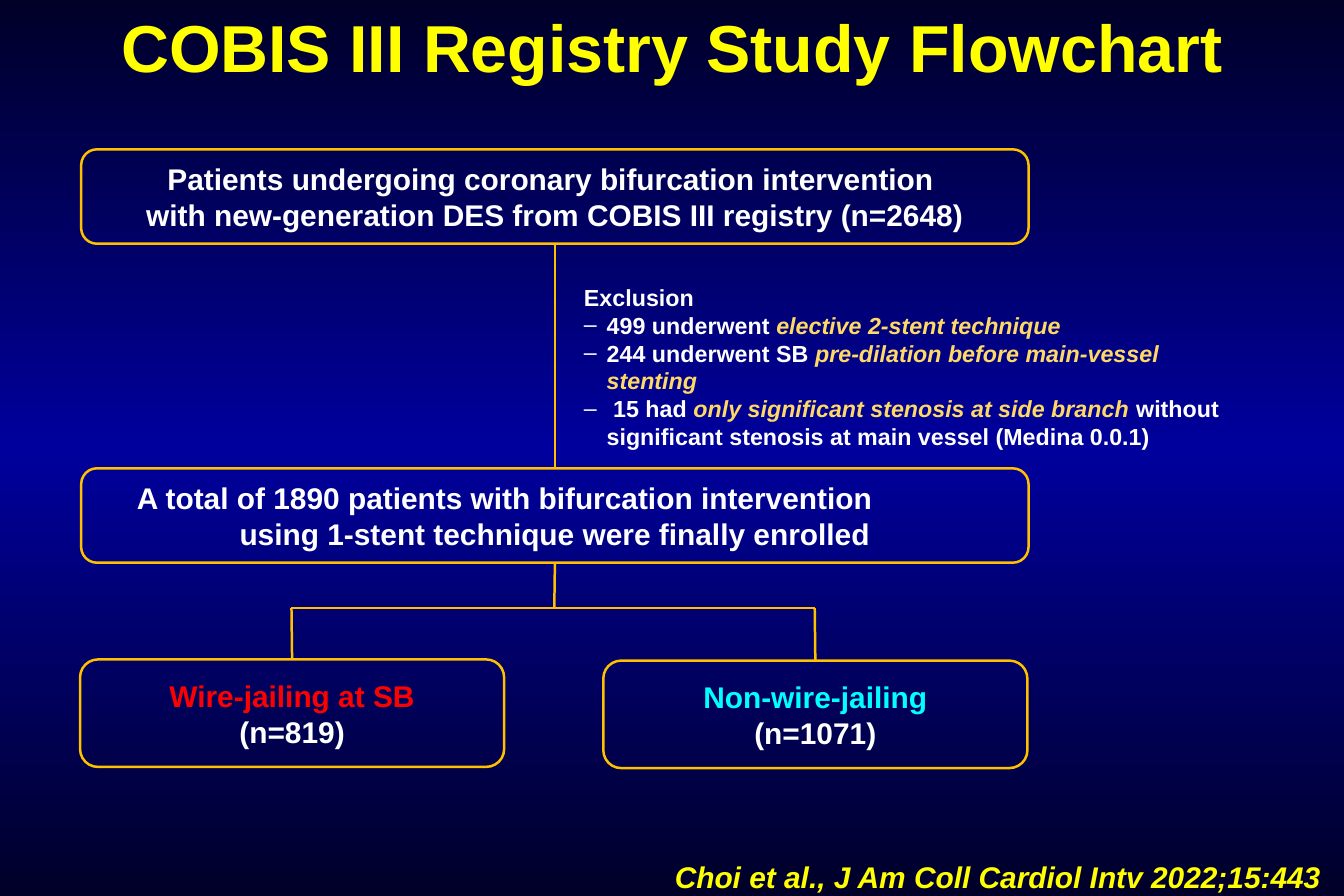
from copy import deepcopy

from lxml import etree
from pptx import Presentation
from pptx.dml.color import RGBColor
from pptx.enum import shapes, text
from pptx.oxml.ns import qn
from pptx.util import Inches, Pt

WHITE, YELLOW, GOLD = "FFFFFF", "FFFF00", "FFC000"
RED, CYAN, SAND = "FF0000", "00FFFF", "FFD966"
NAVY, BLUE = "000028", "00009C"
CENTER, LEFT = text.PP_ALIGN.CENTER, text.PP_ALIGN.LEFT
TOP_SIDE, BOTTOM_SIDE = 0, 2


def color(value):
    return RGBColor.from_string(value)


def set_background(slide):
    fill = slide.background.fill
    fill.gradient()
    fill.gradient_angle = 90
    stop_list = next(slide.element.iter(qn("a:gsLst")))
    stop_list.insert(1, deepcopy(stop_list[0]))
    stops = zip(fill.gradient_stops, (0, 0.5, 1), (NAVY, BLUE, NAVY))
    for stop, position, value in stops:
        stop.position = position
        stop.color.rgb = color(value)


def set_font(paragraph, size, value=WHITE, italic=None):
    font = paragraph.font
    font.name, font.size, font.bold, font.italic = "Arial", Pt(size), True, italic
    font.color.rgb = color(value)


def set_indent(paragraph, left, first=0):
    properties = paragraph._p.get_or_add_pPr()
    properties.set("marL", str(Inches(left)))
    properties.set("indent", str(Inches(first)))
    return properties


def add_text_box(slide, left, top, width, height):
    shape = slide.shapes.add_textbox(*map(Inches, (left, top, width, height)))
    shape.text_frame.word_wrap = True
    return shape.text_frame


def add_label(slide, place, words, size, align, italic=None):
    paragraph = add_text_box(slide, *place).paragraphs[0]
    paragraph.text = words
    paragraph.alignment = align
    set_font(paragraph, size, YELLOW, italic)


def add_box(slide, place, lines):
    """Rounded outline; lines holds (words, colour) pairs."""
    shape = slide.shapes.add_shape(
        shapes.MSO_SHAPE.ROUNDED_RECTANGLE, *map(Inches, place))
    shape.shadow.inherit = False
    shape.fill.background()
    shape.line.color.rgb = color(GOLD)
    shape.line.width = Pt(1.5)
    frame = shape.text_frame
    frame.word_wrap = True
    frame.vertical_anchor = text.MSO_ANCHOR.MIDDLE
    for index, (words, value) in enumerate(lines):
        paragraph = frame.add_paragraph() if index else frame.paragraphs[0]
        paragraph.text = words
        paragraph.alignment = CENTER
        set_font(paragraph, 18, value)
    return shape


def add_line(slide, start, end, upper=None, lower=None):
    """Line from start to end, joined to the boxes above and below it."""
    connector = slide.shapes.add_connector(
        shapes.MSO_CONNECTOR.STRAIGHT, *map(Inches, start + end))
    if upper is not None:
        connector.begin_connect(upper, BOTTOM_SIDE)
    if lower is not None:
        connector.end_connect(lower, TOP_SIDE)
    connector.line.color.rgb = color(GOLD)
    connector.line.width = Pt(1.5)
    etree.SubElement(connector._element.spPr, qn("a:effectLst"))


def add_exclusions(slide, place, heading, items):
    """Heading and dashed items; each item holds (words, emphasised) runs."""
    frame = add_text_box(slide, *place)
    frame.paragraphs[0].text = heading
    set_font(frame.paragraphs[0], 14)
    for item in items:
        paragraph = frame.add_paragraph()
        properties = set_indent(paragraph, 0.19, -0.19)
        bullet_color = etree.SubElement(properties, qn("a:buClr"))
        etree.SubElement(bullet_color, qn("a:srgbClr"), val=WHITE)
        etree.SubElement(properties, qn("a:buFont"), typeface="Arial")
        etree.SubElement(properties, qn("a:buChar"), char="‒")
        set_font(paragraph, 14)
        for words, emphasised in item:
            run = paragraph.add_run()
            run.text = words
            if emphasised:
                run.font.italic = True
                run.font.color.rgb = color(SAND)


def main():
    presentation = Presentation()
    presentation.slide_width, presentation.slide_height = Inches(11.25), Inches(7.5)
    slide = presentation.slides.add_slide(presentation.slide_layouts[6])
    set_background(slide)

    # Title and citation
    add_label(slide, (0, 0, 11.25, 0.77), "COBIS III Registry Study Flowchart",
              40, CENTER)
    add_label(slide, (5.55, 7.14, 5.7, 0.4),
              "Choi et al., J Am Coll Cardiol Intv 2022;15:443", 18, LEFT, True)

    # Patient boxes
    screened = add_box(slide, (0.68, 1.25, 7.93, 0.79), [
        ("Patients undergoing coronary bifurcation intervention ", WHITE),
        ("with new-generation DES from COBIS III registry (n=2648)", WHITE)])
    enrolled = add_box(slide, (0.68, 3.92, 7.93, 0.79), [
        ("A total of 1890 patients with bifurcation intervention", WHITE),
        ("using 1-stent technique were finally enrolled", WHITE)])
    first_line = enrolled.text_frame.paragraphs[0]
    first_line.alignment = LEFT
    set_indent(first_line, 0.33)
    jailed = add_box(slide, (0.67, 5.52, 3.55, 0.9), [
        ("Wire-jailing at SB", RED), ("(n=819)", WHITE)])
    not_jailed = add_box(slide, (5.05, 5.53, 3.55, 0.9), [
        ("Non-wire-jailing", CYAN), ("(n=1071)", WHITE)])

    # Exclusion criteria; a figure space lines up the two-digit count
    add_exclusions(slide, (4.79, 2.32, 5.8, 1.28), "Exclusion", [
        [("499 underwent ", False), ("elective 2-stent technique", True)],
        [("244 underwent SB ", False),
         ("pre-dilation before main-vessel stenting", True)],
        [(" 15 had ", False),
         ("only significant stenosis at side branch ", True),
         ("without significant stenosis at main vessel (Medina 0.0.1)", False)]])

    # Flow lines
    trunk, fork = 4.64, 5.09
    left_branch, right_branch = 2.44, 6.82
    add_line(slide, (trunk, 2.04), (trunk, 3.92), screened, enrolled)
    add_line(slide, (trunk, 4.71), (trunk, fork), upper=enrolled)
    add_line(slide, (left_branch, fork), (right_branch, fork))
    for branch, box in ((left_branch, jailed), (right_branch, not_jailed)):
        add_line(slide, (branch, fork), (branch, 5.52), lower=box)

    presentation.save("out.pptx")


if __name__ == "__main__":
    main()
